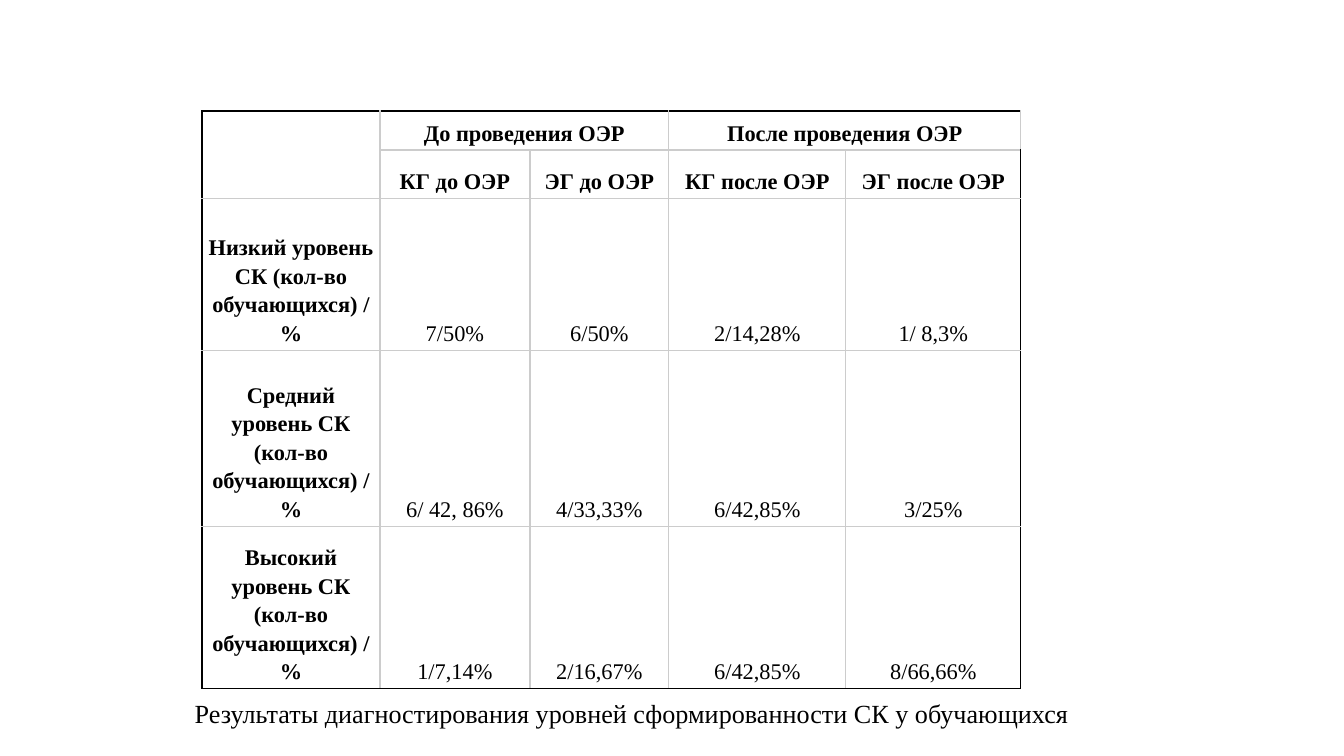
from lxml import etree
from pptx import Presentation
from pptx import util as u
from pptx.dml.color import RGBColor
from pptx.enum import text
from pptx.oxml import ns

PX_PER_INCH = 134.4
FONT = "Times New Roman"
BLACK = RGBColor(0, 0, 0)
GRAY = RGBColor(0xCC, 0xCC, 0xCC)

COL_WIDTHS = [178, 150, 139, 177, 175]
ROW_HEIGHTS = [39, 48, 152, 176, 162]
LEVEL = "{} уровень СК (кол-во обучающихся) / %"
ROWS = [
    ["", "До проведения ОЭР", "", "После проведения ОЭР", ""],
    ["", "КГ до ОЭР", "ЭГ до ОЭР", "КГ после ОЭР", "ЭГ после ОЭР"],
    [LEVEL.format("Низкий"), "7/50%", "6/50%", "2/14,28%", "1/ 8,3%"],
    [LEVEL.format("Средний"), "6/ 42, 86%", "4/33,33%", "6/42,85%", "3/25%"],
    [LEVEL.format("Высокий"), "1/7,14%", "2/16,67%", "6/42,85%", "8/66,66%"],
]
MERGES = [((0, 0), (1, 0)), ((0, 1), (0, 2)), ((0, 3), (0, 4))]
CAPTION = "Результаты диагностирования уровней сформированности СК у обучающихся"


def px(n):
    return u.Emu(round(n * 914400 / PX_PER_INCH))


def set_text(tf, content, size, spacing, bold=False):
    tf.text = content
    p = tf.paragraphs[0]
    p.alignment = text.PP_ALIGN.CENTER
    p.line_spacing = spacing
    for r in p.runs:
        r.font.name = FONT
        r.font.size = u.Pt(size)
        r.font.bold = bold
        r.font.color.rgb = BLACK


def set_borders(cell, colors):
    tc_pr = cell._tc.get_or_add_tcPr()
    for side, color in colors.items():
        ln = etree.SubElement(tc_pr, ns.qn(f"a:ln{side}"), w=str(u.Pt(0.75)))
        fill = etree.SubElement(ln, ns.qn("a:solidFill"))
        etree.SubElement(fill, ns.qn("a:srgbClr"), val=str(color))


def add_results(s, x, y, w, h):
    n_rows, n_cols = len(ROWS), len(COL_WIDTHS)
    table = s.shapes.add_table(n_rows, n_cols, px(x), px(y), px(w), px(h)).table
    table.first_row = table.horz_banding = False
    for col, width in zip(table.columns, COL_WIDTHS):
        col.width = px(width)
    for row, height in zip(table.rows, ROW_HEIGHTS):
        row.height = px(height)
    for i, values in enumerate(ROWS):
        for j, value in enumerate(values):
            cell = table.cell(i, j)
            cell.margin_left = cell.margin_right = px(4)
            cell.margin_top = cell.margin_bottom = px(4)
            cell.vertical_anchor = text.MSO_ANCHOR.BOTTOM
            set_text(cell.text_frame, value, 12, 1.15, bold=i < 2 or j == 0)
            set_borders(cell, {
                "L": BLACK if j == 0 else GRAY,
                "R": BLACK if j == n_cols - 1 else GRAY,
                "T": BLACK if i == 0 else GRAY,
                "B": BLACK if i == n_rows - 1 else GRAY,
            })
            cell.fill.background()
    for first, last in MERGES:
        table.cell(*first).merge(table.cell(*last))


def add_caption(s, x, y, w, h):
    tf = s.shapes.add_textbox(px(x), px(y), px(w), px(h)).text_frame
    tf.word_wrap = True
    tf.margin_left = tf.margin_right = px(13)
    tf.margin_top = tf.margin_bottom = px(13)
    set_text(tf, CAPTION, 14, 1.5)


def main():
    prs = Presentation()
    prs.slide_width, prs.slide_height = px(1344), px(756)
    s = prs.slides.add_slide(prs.slide_layouts[6])
    add_caption(s, 1, 669, 1262, 59)
    add_results(s, 202, 111, sum(COL_WIDTHS), sum(ROW_HEIGHTS))
    prs.save("out.pptx")


if __name__ == "__main__":
    main()
